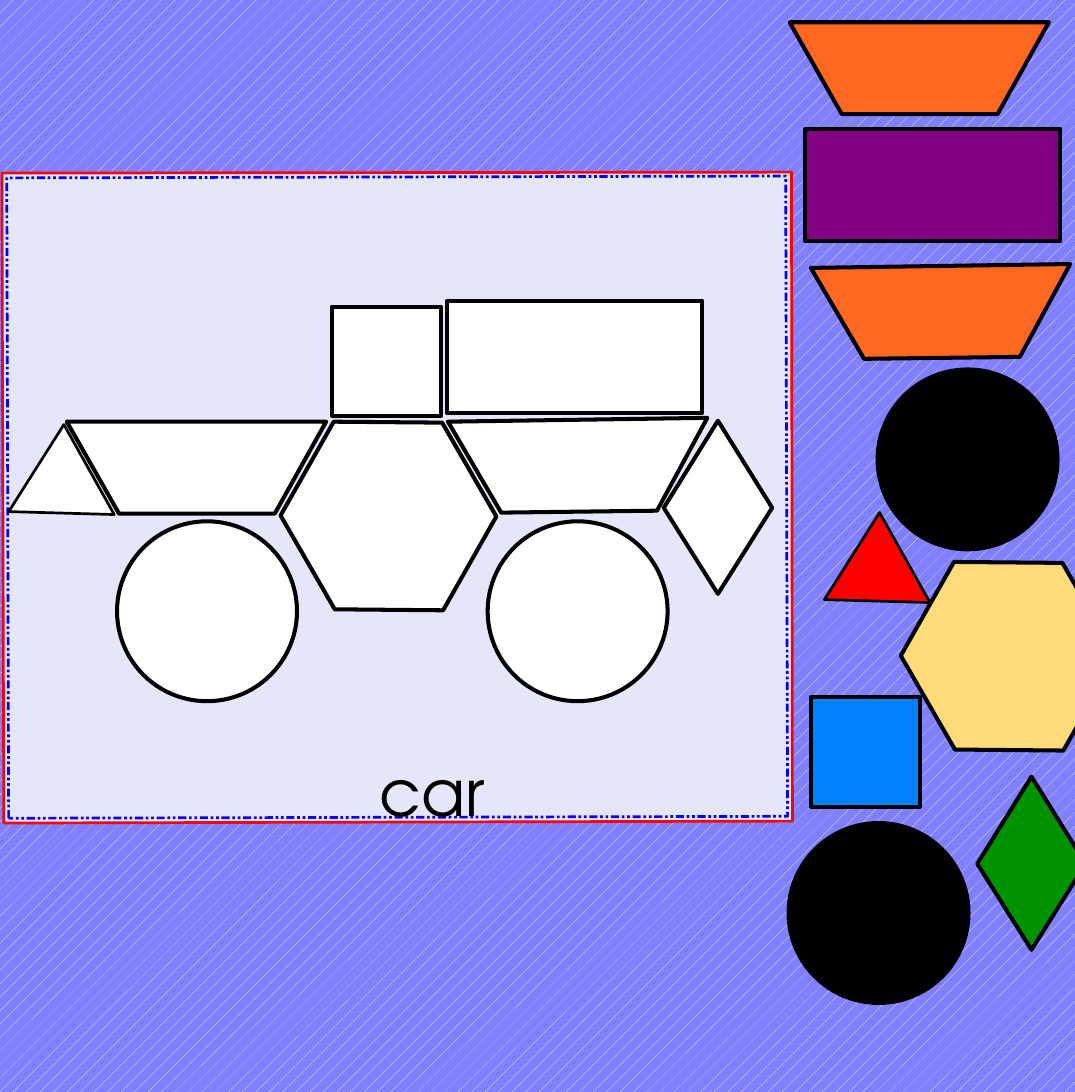
from pptx import Presentation
from pptx import util as u
from pptx.dml.color import RGBColor
from pptx.enum import dml, shapes, text

COLOURS = {
    "stripe": "FFFFFF", "backdrop": "8080FF", "card": "E6E6FA",
    "outer edge": "FF0000", "inner edge": "0000FF", "ink": "000000",
    "blank": "FFFFFF", "triangle": "FF0000", "diamond": "009300",
    "hexagon": "FFDB79", "square": "0181FF", "trapezoid": "FF6820",
    "tilted trapezoid": "FF6820", "rectangle": "800080", "circle": "000000",
}

# Corners of each piece, measured from its own top left
CORNERS = {
    "triangle": [(0.57, 0), (0, 0.9), (1.09, 0.93)],
    "diamond": [(1.12, 0.9), (0.56, 1.79), (0, 0.9), (0.56, 0)],
    "hexagon": [(0, 0.97), (0.55, 0), (1.67, 0.01),
                (2.23, 0.98), (1.68, 1.95), (0.56, 1.94)],
    "trapezoid": [(0, 0), (0.54, 0.95), (2.15, 0.95), (2.68, 0)],
    "tilted trapezoid": [(0, 0.04), (0.55, 0.98), (2.16, 0.96), (2.68, 0)],
}
PRESETS = {
    "square": (shapes.MSO_SHAPE.RECTANGLE, 1.13, 1.13),
    "rectangle": (shapes.MSO_SHAPE.RECTANGLE, 2.64, 1.16),
    "circle": (shapes.MSO_SHAPE.OVAL, 1.86, 1.86),
}

# Piece, its place in the car, its place among the loose pieces
PIECES = [
    ("triangle", (0.09, 4.39), (8.52, 5.3)),
    ("diamond", (6.86, 4.35), (10.1, 8.03)),
    ("hexagon", (2.9, 4.36), (9.31, 5.81)),
    ("square", (3.43, 3.17), (8.38, 7.21)),
    ("trapezoid", (0.69, 4.36), (8.16, 0.23)),
    ("tilted trapezoid", (4.63, 4.32), (8.38, 2.73)),
    ("rectangle", (4.62, 3.11), (8.32, 1.33)),
    ("circle", (5.04, 5.39), (9.07, 3.82)),
    ("circle", (1.21, 5.39), (8.15, 8.51)),
]
OUTER_EDGE = [(0.04, 8.51), (0.02, 1.79), (8.18, 1.78), (8.19, 8.49)]
INNER_EDGE = [(0.09, 8.46), (0.07, 1.84), (8.12, 1.82), (8.14, 8.44)]


def rgb(name):
    return RGBColor.from_string(COLOURS[name])


class PuzzleSlide:
    font = "TeX Gyre Adventor"

    def __init__(self, slide):
        self.slide = slide

    def backdrop(self):
        fill = self.slide.background.fill
        fill.patterned()
        fill.pattern = dml.MSO_PATTERN.PERCENT_5
        fill.fore_color.rgb = rgb("stripe")
        fill.back_color.rgb = rgb("backdrop")

    def group(self):
        return self.slide.shapes.add_group_shape().shapes

    def paint(self, shape, fill, edge, width, dash=None):
        shape.shadow.inherit = False
        shape.fill.solid()
        shape.fill.fore_color.rgb = rgb(fill)
        shape.line.color.rgb = rgb(edge)
        for attribute, value in {"width": u.Pt(width), "dash_style": dash}.items():
            setattr(shape.line, attribute, value)

    def polygon(self, parent, corners, origin=(0, 0)):
        left, top = origin
        points = [(u.Inches(left + x), u.Inches(top + y)) for x, y in corners]
        builder = parent.build_freeform(*points[0], scale=1.0)
        builder.add_line_segments(points[1:], close=True)
        return builder.convert_to_shape()

    def piece(self, parent, kind, place, fill):
        if kind in CORNERS:
            shape = self.polygon(parent, CORNERS[kind], place)
        else:
            preset, width, height = PRESETS[kind]
            shape = parent.add_shape(preset, *map(u.Inches, (*place, width, height)))
        self.paint(shape, fill, "ink", 2 if kind == "triangle" else 3)

    def card(self):
        parent = self.group()
        self.paint(self.polygon(parent, OUTER_EDGE), "card", "outer edge", 2)
        # python-pptx has no member for sysDashDotDot, so the dash is set in XML
        inner = self.polygon(parent, INNER_EDGE)
        self.paint(inner, "card", "inner edge", 2, dml.MSO_LINE.DASH_DOT_DOT)
        inner.line._ln.prstDash.set("val", "sysDashDotDot")

    def title(self, wording, left, top, width, height):
        """Fill the title placeholder and lift it above the card."""
        title = self.slide.shapes.title
        place = dict(left=left, top=top, width=width, height=height)
        for side, length in place.items():
            setattr(title, side, u.Inches(length))
        frame = title.text_frame
        frame.text = wording
        paragraph = frame.paragraphs[0]
        paragraph.alignment = text.PP_ALIGN.LEFT
        frame_format = {"word_wrap": True,
                        "vertical_anchor": text.MSO_ANCHOR.TOP,
                        "auto_size": text.MSO_AUTO_SIZE.SHAPE_TO_FIT_TEXT}
        font_format = {"name": self.font, "size": u.Pt(48)}
        for target, values in ((frame, frame_format),
                               (paragraph.runs[0].font, font_format)):
            for attribute, value in values.items():
                setattr(target, attribute, value)
        paragraph.runs[0].font.color.rgb = rgb("ink")
        self.slide.shapes._spTree.append(title._element)


def main():
    deck = Presentation()
    deck.slide_width, deck.slide_height = u.Inches(11.11), u.Inches(11.29)
    puzzle = PuzzleSlide(deck.slides.add_slide(deck.slide_layouts[5]))
    puzzle.backdrop()
    puzzle.card()
    puzzle.title("car", 3.82, 7.72, 1.89, 0.91)

    car = puzzle.group()
    for kind, in_car, _ in PIECES:
        puzzle.piece(car, kind, in_car, "blank")
    for kind, _, loose in PIECES:
        puzzle.piece(puzzle.slide.shapes, kind, loose, kind)
    deck.save("out.pptx")


if __name__ == "__main__":
    main()
